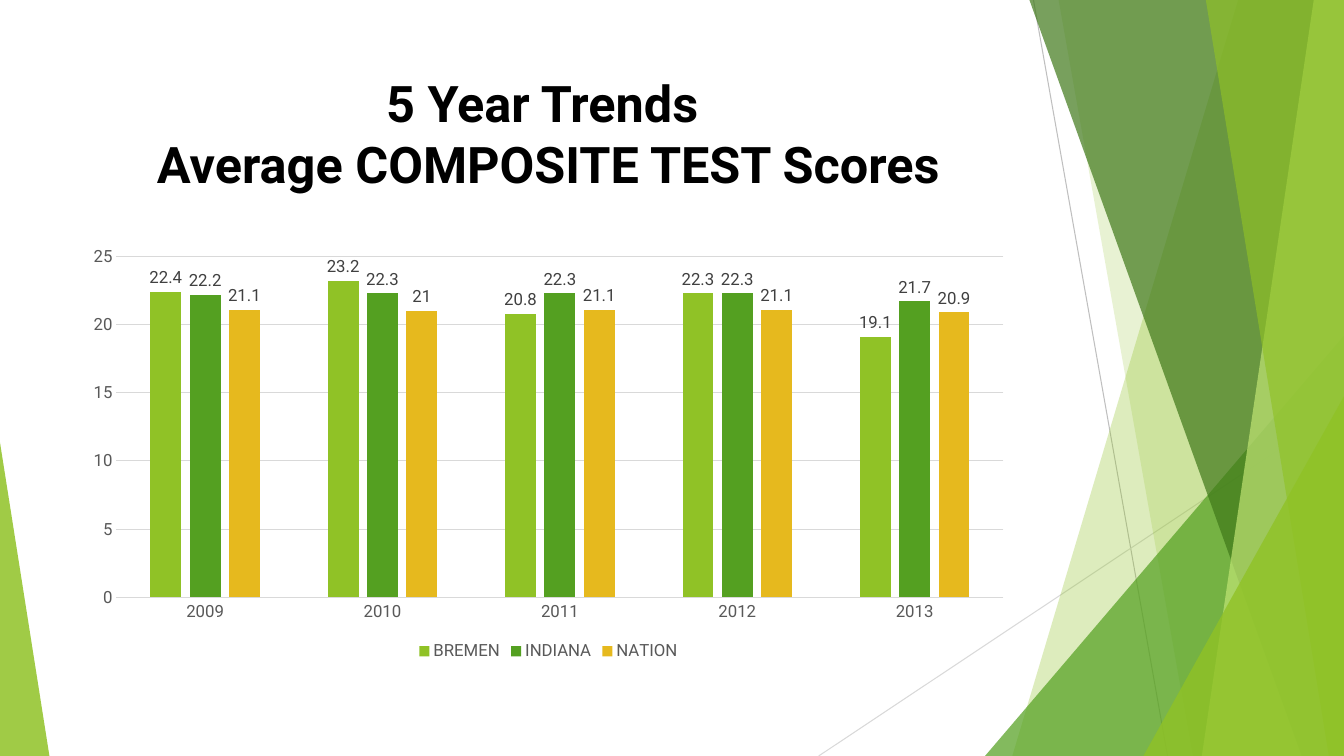
from dataclasses import dataclass

from lxml import etree
from pptx import Presentation
from pptx.chart.data import CategoryChartData
from pptx.dml.color import RGBColor
from pptx.enum.chart import (XL_CHART_TYPE, XL_LABEL_POSITION,
                             XL_LEGEND_POSITION, XL_TICK_MARK)
from pptx.enum.shapes import MSO_CONNECTOR, MSO_SHAPE
from pptx.enum.text import MSO_ANCHOR, PP_ALIGN
from pptx.oxml.ns import qn
from pptx.util import Inches, Pt

COLUMNS = XL_CHART_TYPE.COLUMN_CLUSTERED
OUTSIDE = XL_LABEL_POSITION.OUTSIDE_END
BOTTOM = XL_LEGEND_POSITION.BOTTOM
NO_TICK = XL_TICK_MARK.NONE
STRAIGHT = MSO_CONNECTOR.STRAIGHT
TRIANGLE = MSO_SHAPE.ISOSCELES_TRIANGLE
TOP = MSO_ANCHOR.TOP
CENTER = PP_ALIGN.CENTER

WIDTH, HEIGHT = 13.33, 7.5
FONT = "Roboto"
COLORS = {
    "lime": "90C226", "green": "54A021", "forest": "3F7819", "pale": "C0E474",
    "gold": "E6B91E", "black": "000000", "label": "404040", "axis": "595959",
    "grid": "D9D9D9", "ray": "BFBFBF",
}
YEARS = ["2009", "2010", "2011", "2012", "2013"]


@dataclass
class Ray:
    start: tuple[float, float]
    end: tuple[float, float]
    color: str


@dataclass
class Band:
    """A panel from its slanted left side to the right slide edge."""
    head: float
    foot: float
    color: str
    alpha: int


@dataclass
class Peak:
    """A triangle standing on the bottom edge; apex runs from 0 to 1."""
    left: float
    width: float
    height: float
    apex: float
    color: str
    alpha: int


@dataclass
class Score:
    name: str
    values: list[float]
    color: str


RAYS = [
    Ray((10.25, 0), (11.58, HEIGHT), "ray"),
    Ray((WIDTH, 4.03), (8.12, HEIGHT), "grid"),
]
FACETS = [
    Band(12.28, 10.04, "lime", 30),
    Band(10.5, 11.83, "lime", 20),
    Peak(9.77, 3.56, 4.17, 1, "green", 72),
    Band(10.21, 12.91, "forest", 70),
    Band(13.03, 11.92, "pale", 70),
    Band(11.96, 13.18, "lime", 65),
    Peak(11.34, 1.99, 3.57, 1, "lime", 80),
    Peak(0, 0.49, 3.11, 0, "lime", 85),
]
SCORES = [
    Score("BREMEN", [22.4, 23.2, 20.8, 22.3, 19.1], "lime"),
    Score("INDIANA", [22.2, 22.3, 22.3, 22.3, 21.7], "green"),
    Score("NATION", [21.1, 21, 21.1, 21.1, 20.9], "gold"),
]


def tint(name: str) -> RGBColor:
    return RGBColor.from_string(COLORS[name])


def set_font(font, size: float, color: str) -> None:
    font.name, font.size = FONT, Pt(size)
    font.color.rgb = tint(color)


def set_line(line, color: str) -> None:
    line.color.rgb = tint(color)
    line.width = Pt(0.75)


def draw_ray(slide, ray: Ray) -> None:
    line = slide.shapes.add_connector(
        STRAIGHT, *(Inches(n) for n in ray.start + ray.end))
    set_line(line.line, ray.color)
    etree.SubElement(line._element.spPr, qn("a:effectLst"))


def draw_facet(slide, facet: Band | Peak) -> None:
    if isinstance(facet, Band):
        pen = slide.shapes.build_freeform(Inches(facet.head), 0)
        pen.add_line_segments([(Inches(x), Inches(y)) for x, y in (
            (WIDTH, 0), (WIDTH, HEIGHT), (facet.foot, HEIGHT))])
        shape = pen.convert_to_shape()
    else:
        shape = slide.shapes.add_shape(
            TRIANGLE, Inches(facet.left), Inches(HEIGHT - facet.height),
            Inches(facet.width), Inches(facet.height))
        shape.adjustments[0] = facet.apex
    shape.shadow.inherit = False
    shape.line.fill.background()
    shape.fill.solid()
    shape.fill.fore_color.rgb = tint(facet.color)
    color = shape._element.spPr.find(f"{qn('a:solidFill')}/{qn('a:srgbClr')}")
    etree.SubElement(color, qn("a:alpha"), val=str(facet.alpha * 1000))


def write_title(slide) -> None:
    title = slide.shapes.title
    title.left, title.top = Inches(0.74), Inches(0.67)
    title.width, title.height = Inches(9.4), Inches(1.44)
    frame = title.text_frame
    frame.text = "5 Year Trends \vAverage COMPOSITE TEST Scores"
    frame.word_wrap = True
    frame.vertical_anchor = TOP
    para = frame.paragraphs[0]
    para.alignment = CENTER
    para.font.bold = True
    set_font(para.font, 36, "black")


def draw_chart(slide) -> None:
    data = CategoryChartData()
    data.categories = YEARS
    for score in SCORES:
        data.add_series(score.name, score.values)
    chart = slide.shapes.add_chart(
        COLUMNS, Inches(0.74), Inches(2.36), Inches(9.4), Inches(4.24),
        data).chart
    set_font(chart.font, 10, "black")
    chart.has_title = False
    chart.has_legend = True
    chart.legend.position = BOTTOM
    chart.legend.include_in_layout = False
    set_font(chart.legend.font, 12, "axis")

    years, scale = chart.category_axis, chart.value_axis
    for axis in (years, scale):
        axis.major_tick_mark = axis.minor_tick_mark = NO_TICK
        set_font(axis.tick_labels.font, 12, "axis")
    set_line(years.format.line, "grid")
    scale.format.line.fill.background()
    scale.minimum_scale, scale.maximum_scale, scale.major_unit = 0, 25, 5
    set_line(scale.major_gridlines.format.line, "grid")

    plot = chart.plots[0]
    plot.gap_width, plot.overlap = 219, -27
    plot.vary_by_categories = False
    for score, series in zip(SCORES, plot.series):
        series.format.fill.solid()
        series.format.fill.fore_color.rgb = tint(score.color)
        labels = series.data_labels
        labels.show_value = True
        labels.position = OUTSIDE
        set_font(labels.font, 12, "label")


def main() -> None:
    deck = Presentation()
    deck.slide_width, deck.slide_height = Inches(WIDTH), Inches(HEIGHT)
    slide = deck.slides.add_slide(deck.slide_layouts.get_by_name("Title Only"))
    for ray in RAYS:
        draw_ray(slide, ray)
    for facet in FACETS:
        draw_facet(slide, facet)
    write_title(slide)
    draw_chart(slide)
    deck.save("out.pptx")


if __name__ == "__main__":
    main()
